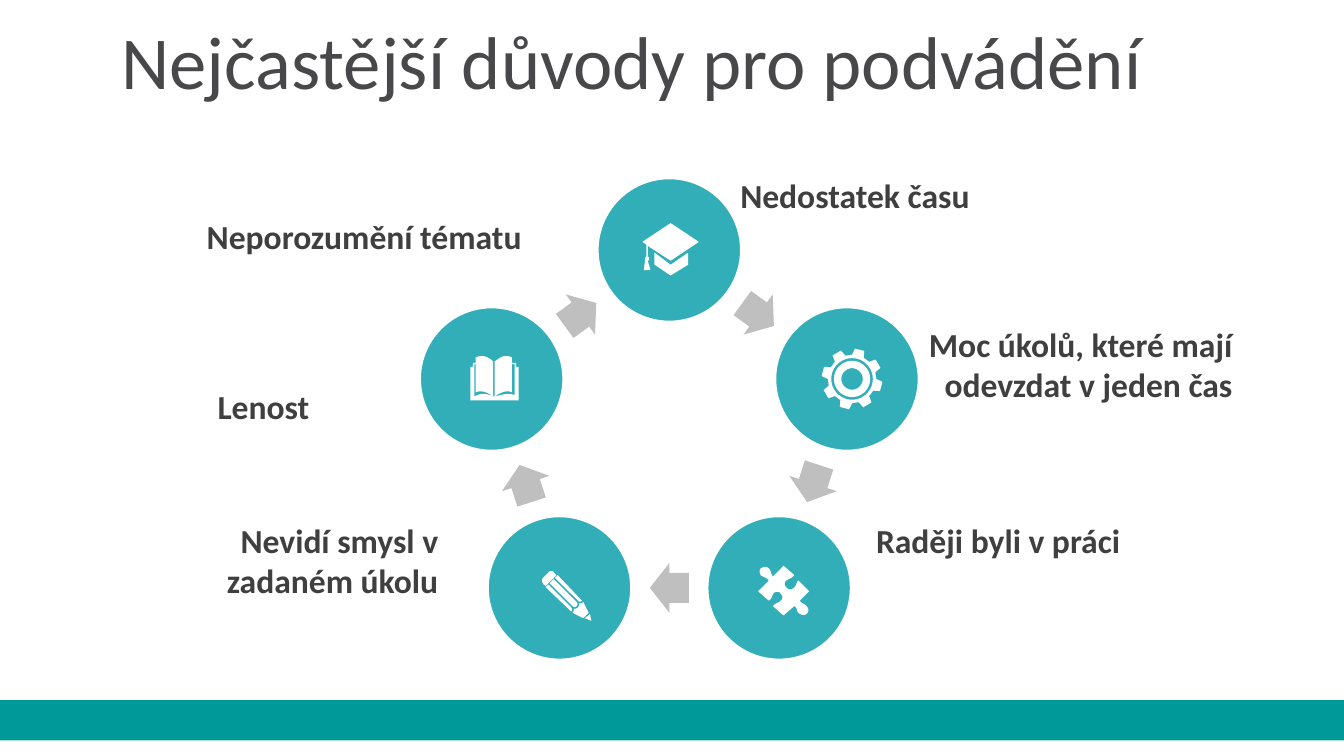
import math
from dataclasses import dataclass

import pptx
import pptx.dml.color
import pptx.enum.shapes
import pptx.enum.text
import pptx.util
from pptx.util import Inches

PRESET = pptx.enum.shapes.MSO_SHAPE
ALIGN = pptx.enum.text.PP_ALIGN
ANCHOR = pptx.enum.text.MSO_ANCHOR

# A step is a corner (x, y) or a Bézier curve (x1, y1, x2, y2, x, y),
# in hundredths of an inch on the slide.
Step = tuple[float, ...]
Outline = list[Step]


@dataclass(frozen=True)
class Theme:
    font: str = "Calibri"
    title_size: int = 40
    label_size: int = 18
    title: str = "484749"
    label: str = "3F3F3F"
    circle: str = "32AEB8"
    arrow: str = "BFBFBF"
    bar: str = "009999"
    white: str = "FFFFFF"


@dataclass(frozen=True)
class Label:
    text: str
    left: float
    top: float
    width: float
    height: float = 0.3
    align: ALIGN = ALIGN.LEFT


THEME = Theme()
RING_X, RING_Y, RING_RADIUS = 4.98, 3.25, 1.39
REASONS = 5
CIRCLE_SIZE = 1.08
ARROW_LENGTH, ARROW_WIDTH = 0.29, 0.37

LABELS = [
    Label("Moc úkolů, které mají odevzdat v jeden čas", 6.73, 2.36, 2.54, align=ALIGN.RIGHT),
    Label("Nedostatek času", 5.41, 1.25, 3.7),
    Label("Raději byli v práci", 6.42, 3.82, 2.54),
    Label("Nevidí smysl v zadaném úkolu", 0.82, 3.82, 2.54, align=ALIGN.RIGHT),
    Label("Neporozumění tématu", 1.44, 1.56, 3.17, 0.35),
    Label("Lenost", 1.52, 2.82, 1.38),
]

BOOK: list[Outline] = [[
    (368, 295), (367, 295), (362, 293, 359, 292, 353, 295), (353, 271), (354, 271),
    (354, 292), (358, 290, 363, 292, 367, 295), (367, 269),
    (365, 267, 362, 265, 359, 265), (358, 265, 356, 265, 354, 266), (354, 270),
    (352, 270), (352, 273), (350, 273), (350, 298), (386, 298), (386, 273), (384, 273),
    (384, 270), (381, 270), (381, 266), (379, 265, 378, 265, 376, 265),
    (373, 265, 371, 267, 368, 269), (368, 295), (373, 292, 377, 290, 381, 292),
    (381, 271), (383, 271), (383, 294), (377, 292, 374, 294, 368, 295),
]]

PUZZLE: list[Outline] = [[
    (566, 423), (565, 424, 565, 426, 566, 428), (568, 430, 570, 429, 572, 432),
    (564, 440), (572, 447), (575, 445, 574, 443, 576, 441), (578, 440, 580, 440, 581, 442),
    (582, 443, 583, 445, 581, 447), (579, 449, 578, 448, 575, 451), (583, 458),
    (591, 451), (594, 453, 592, 454, 594, 456), (596, 458, 599, 458, 600, 457),
    (602, 455, 602, 453, 600, 451), (599, 449, 597, 450, 595, 447), (602, 440),
    (594, 432), (592, 434, 593, 436, 590, 438), (589, 439, 586, 439, 585, 437),
    (584, 436, 583, 434, 585, 432), (588, 430, 588, 431, 591, 428), (583, 421),
    (575, 429), (573, 426, 574, 425, 572, 423), (570, 421, 568, 422, 566, 423),
]]

GRADUATION_CAP: list[Outline] = [
    [(512, 188), (499, 197), (487, 188), (487, 197), (499, 205), (512, 197)],
    [(499, 166), (478, 180), (481, 182), (481, 191), (480, 191, 480, 192, 480, 193),
     (480, 194), (479, 201), (484, 201), (482, 194), (483, 194, 483, 193, 483, 193),
     (483, 192, 483, 191, 482, 191), (482, 183), (499, 194), (520, 180)],
]

PENCIL: list[Outline] = [
    [(439, 457), (435, 460), (440, 462)],
    [(434, 448), (433, 449, 432, 449, 431, 449), (431, 450, 431, 451, 430, 452),
     (429, 453, 428, 453, 427, 453), (427, 454, 427, 455, 426, 456), (434, 460), (438, 456)],
    [(408, 435), (406, 437), (425, 455), (426, 454, 426, 453, 425, 452)],
    [(412, 431), (409, 434), (426, 451), (427, 452, 428, 452, 429, 451),
     (430, 450, 430, 449, 429, 448)],
    [(415, 428), (413, 430), (430, 447), (431, 448, 432, 448, 433, 447)],
    [(410, 425), (409, 425, 409, 425, 408, 426), (404, 430), (403, 431, 403, 433, 404, 434),
     (404, 435, 405, 435, 406, 436), (414, 428), (412, 426), (412, 425, 411, 425, 410, 425)],
]


def polar(x: float, y: float, radius: float, degrees: float) -> tuple[float, float]:
    """Point at a clockwise angle from straight up."""
    angle = math.radians(degrees)
    return x + radius * math.sin(angle), y - radius * math.cos(angle)


def gear(x: float, y: float, teeth: int = 8) -> list[Outline]:
    profile = [(18, -14.5), (22.7, -9), (22.7, 9), (18, 14.5)]
    rim = [polar(x, y, radius, 14.5 + tooth * 360 / teeth + offset)
           for tooth in range(teeth) for radius, offset in profile]
    rings = [[polar(x, y, radius, degrees) for degrees in range(0, 360, 10)]
             for radius in (15.5, 13.5, 8)]
    return [rim, *rings]


def flatten(outline: Outline, pieces: int = 6) -> list[tuple[int, int]]:
    """Turn corners and curves into points in slide units."""
    points: list[tuple[float, float]] = []
    for step in outline:
        if len(step) == 2:
            points.append((step[0], step[1]))
            continue
        controls = [points[-1], step[0:2], step[2:4], step[4:6]]
        for piece in range(1, pieces + 1):
            t = piece / pieces
            weights = [math.comb(3, k) * t**k * (1 - t) ** (3 - k) for k in range(4)]
            points.append((sum(w * c[0] for w, c in zip(weights, controls)),
                           sum(w * c[1] for w, c in zip(weights, controls))))
    return [(Inches(x / 100), Inches(y / 100)) for x, y in points]


def rgb(color: str) -> pptx.dml.color.RGBColor:
    return pptx.dml.color.RGBColor.from_string(color)


def paint(shape, color: str) -> None:
    shape.shadow.inherit = False
    shape.fill.solid()
    shape.fill.fore_color.rgb = rgb(color)
    shape.line.fill.background()


def add_preset(slide, preset: PRESET, x: float, y: float, width: float, height: float, color: str):
    """Draw a preset shape around its centre."""
    shape = slide.shapes.add_shape(preset, Inches(x - width / 2), Inches(y - height / 2),
                                   Inches(width), Inches(height))
    paint(shape, color)
    return shape


def add_icon(slide, outlines: list[Outline]) -> None:
    first, *others = [flatten(outline) for outline in outlines]
    builder = slide.shapes.build_freeform(*first[0])
    builder.add_line_segments(first[1:], close=True)
    for points in others:
        builder.move_to(*points[0])
        builder.add_line_segments(points[1:], close=True)
    paint(builder.convert_to_shape(), THEME.white)


def add_label(slide, label: Label, size: int, color: str, bold: bool):
    box = slide.shapes.add_textbox(Inches(label.left), Inches(label.top),
                                   Inches(label.width), Inches(label.height))
    frame = box.text_frame
    frame.word_wrap = True
    paragraph = frame.paragraphs[0]
    paragraph.alignment = label.align
    run = paragraph.add_run()
    run.text = label.text
    run.font.name = THEME.font
    run.font.size = pptx.util.Pt(size)
    run.font.bold = bold
    run.font.color.rgb = rgb(color)
    return frame


def add_ring(slide) -> None:
    step = 360 / REASONS
    for position in range(REASONS):
        x, y = polar(RING_X, RING_Y, RING_RADIUS, position * step)
        circle = add_preset(slide, PRESET.OVAL, x, y, CIRCLE_SIZE, CIRCLE_SIZE, THEME.circle)
        circle.line.color.rgb = rgb(THEME.white)
        circle.line.width = pptx.util.Pt(2)

        turn = (position + 0.5) * step
        x, y = polar(RING_X, RING_Y, RING_RADIUS * math.cos(math.radians(step / 2)), turn)
        arrow = add_preset(slide, PRESET.RIGHT_ARROW, x, y, ARROW_LENGTH, ARROW_WIDTH, THEME.arrow)
        arrow.adjustments[0], arrow.adjustments[1] = 0.6, 0.5
        arrow.rotation = turn


def main() -> None:
    presentation = pptx.Presentation()
    presentation.slide_width = Inches(10)
    presentation.slide_height = Inches(10) * 9 // 16
    slide = presentation.slides.add_slide(presentation.slide_layouts[6])

    add_preset(slide, PRESET.RECTANGLE, 5, 5.36, 10, 0.3, THEME.bar)
    add_ring(slide)
    for icon in (BOOK, PUZZLE, GRADUATION_CAP, PENCIL, gear(634, 282)):
        add_icon(slide, icon)
    for label in LABELS:
        add_label(slide, label, THEME.label_size, THEME.label, bold=True)

    heading = Label("Nejčastější důvody pro podvádění", 0.02, 0.16, 9.36, 0.66, ALIGN.CENTER)
    title = add_label(slide, heading, THEME.title_size, THEME.title, bold=False)
    title.vertical_anchor = ANCHOR.MIDDLE
    title.margin_top = title.margin_bottom = Inches(0.1)
    title.paragraphs[0].line_spacing = 0.9

    presentation.save("out.pptx")


if __name__ == "__main__":
    main()
